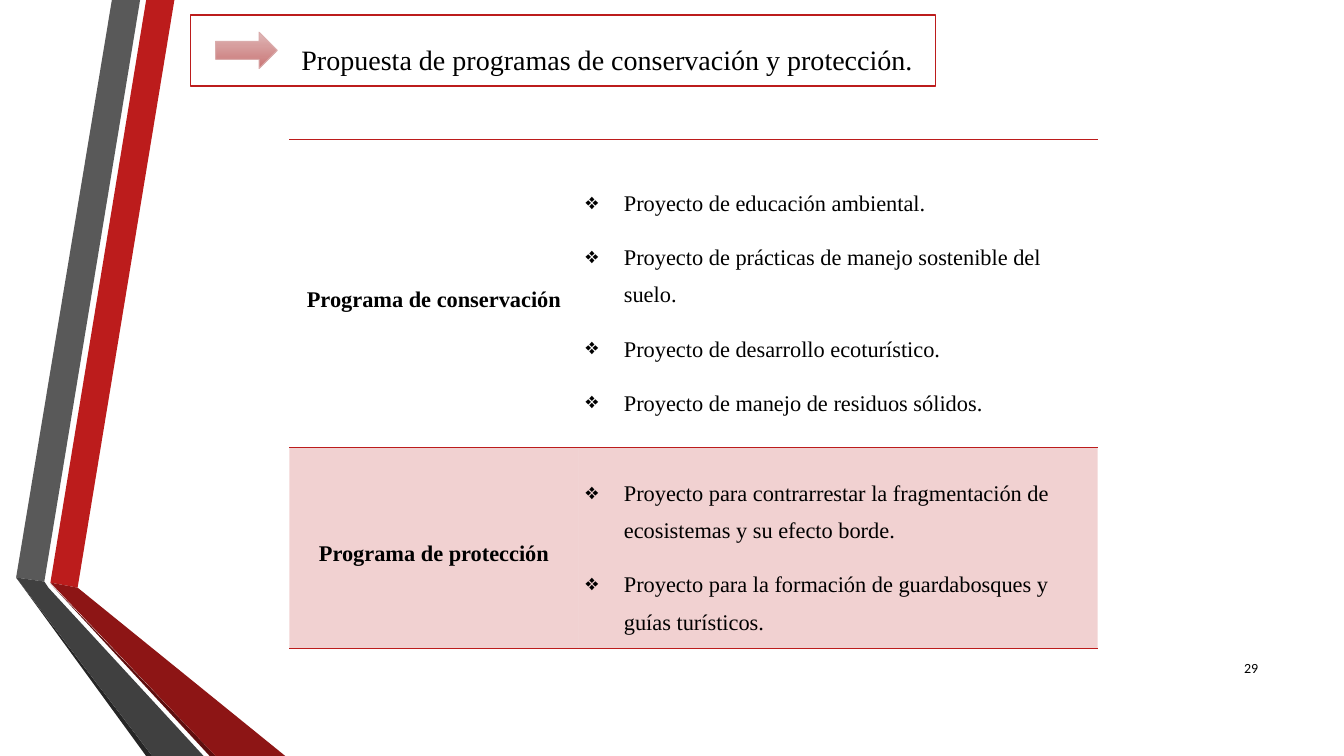
from dataclasses import dataclass
from lxml.etree import SubElement
from pptx import Presentation
from pptx.dml.color import RGBColor
from pptx.enum.shapes import MSO_SHAPE
from pptx.enum.text import MSO_ANCHOR, MSO_AUTO_SIZE, PP_ALIGN
from pptx.oxml.ns import qn
from pptx.util import Inches, Pt


@dataclass(frozen=True)
class Theme:
    red: str = "BC1C1C"
    deep_red: str = "8D1515"
    shadow_red: str = "5E0E0E"
    grey: str = "595959"
    deep_grey: str = "404040"
    shadow_grey: str = "262626"
    arrow_top: str = "DFB7B7"
    arrow_bottom: str = "C97575"
    arrow_edge: str = "DAACAC"
    white: str = "FFFFFF"
    ink: str = "000000"
    serif: str = "Times New Roman"
    sans: str = "Calibri"
    heading_size: int = 20
    body_size: int = 16
    number_size: int = 10


theme = Theme()
presentation = Presentation()
presentation.slide_width, presentation.slide_height = Inches(13.33), Inches(7.5)
slide = presentation.slides.add_slide(presentation.slide_layouts[5])
column, row = presentation.slide_width / 160, presentation.slide_height / 90


def place(x, y, width, height):
    return round(x * column), round(y * row), round(width * column), round(height * row)


def write(paragraph, wording, size, font=theme.serif, bold=False):
    run = paragraph.add_run()
    run.text = wording
    run.font.size, run.font.name, run.font.bold = Pt(size), font, bold
    run.font.color.rgb = RGBColor.from_string(theme.ink)


ribbons = [
    (theme.red, [(6, 69.36), (9.24, 69.96), (20.76, 0), (17.4, 0)]),
    (theme.grey, [(16.68, 0), (13.32, 0), (1.92, 68.76), (5.28, 69.24)]),
    (theme.shadow_grey, [(1.92, 68.76), (17.4, 90), (18.12, 90)]),
    (theme.shadow_red, [(6, 69.48), (24.96, 90), (25.68, 90)]),
    (theme.deep_red, [(6, 69.36), (25.68, 90), (33.96, 90), (9.24, 69.96)]),
    (theme.deep_grey, [(24.24, 90), (5.76, 69.96), (5.28, 69.24), (1.92, 68.76), (18.12, 90)]),
]
for colour, corners in ribbons:
    points = [(x * column, y * row) for x, y in corners]
    outline = slide.shapes.build_freeform(*points[0])
    outline.add_line_segments(points[1:], close=True)
    ribbon = outline.convert_to_shape()
    ribbon.shadow.inherit = False
    ribbon.fill.solid()
    ribbon.fill.fore_color.rgb = RGBColor.from_string(colour)
    ribbon.line.fill.background()

heading = slide.shapes.title
heading.left, heading.top, heading.width, heading.height = place(22.68, 1.8, 88.68, 8.4)
heading.fill.solid()
heading.fill.fore_color.rgb = RGBColor.from_string(theme.white)
heading.line.color.rgb = RGBColor.from_string(theme.red)
heading.line.width = Pt(1.25)
heading_text = heading.text_frame
heading_text.auto_size = MSO_AUTO_SIZE.NONE
heading_text.word_wrap = True
heading_text.vertical_anchor = MSO_ANCHOR.MIDDLE
heading_text.margin_left, heading_text.margin_right = Inches(1.1), 0
heading_line = heading_text.paragraphs[0]
heading_line.alignment = PP_ALIGN.LEFT
heading_line.line_spacing = 1.5
write(heading_line, "Propuesta de programas de conservación y protección.", theme.heading_size)

arrow = slide.shapes.add_shape(MSO_SHAPE.RIGHT_ARROW, *place(25.68, 3.84, 7.32, 4.32))
arrow.shadow.inherit = False
arrow.fill.gradient()
arrow.fill.gradient_angle = 270
for stop, colour in zip(arrow.fill.gradient_stops, (theme.arrow_top, theme.arrow_bottom)):
    stop.color.rgb = RGBColor.from_string(colour)
arrow.line.color.rgb = RGBColor.from_string(theme.arrow_edge)
arrow.line.width = Pt(0.75)

programmes = [
    ("Programa de conservación", 36.72, [
        "Proyecto de educación ambiental.",
        "Proyecto de prácticas de manejo sostenible del suelo.",
        "Proyecto de desarrollo ecoturístico.",
        "Proyecto de manejo de residuos sólidos.",
    ]),
    ("Programa de protección", 23.88, [
        "Proyecto para contrarrestar la fragmentación de ecosistemas y su efecto borde.",
        "Proyecto para la formación de guardabosques y guías turísticos.",
    ]),
]
table = slide.shapes.add_table(2, 2, *place(34.44, 16.56, 96.24, 60.6)).table
table.first_row = table.horz_banding = False
table_style = table._tbl.tblPr.find(qn("a:tableStyleId"))
table_style.text = "{2D5ABB26-0587-4C30-8999-92F81FD0307C}"
for table_column, width in zip(table.columns, (34.44, 61.8)):
    table_column.width = round(width * column)

for index, (programme, height, projects) in enumerate(programmes):
    table.rows[index].height = round(height * row)
    programme_cell, projects_cell = table.cell(index, 0), table.cell(index, 1)
    for cell in (programme_cell, projects_cell):
        cell.vertical_anchor = MSO_ANCHOR.MIDDLE
        cell.margin_left = cell.margin_right = Inches(0.07)
        cell.margin_top = cell.margin_bottom = 0
        properties = cell._tc.get_or_add_tcPr()
        for edge in ("a:lnT", "a:lnB"):
            border = SubElement(properties, qn(edge), w=str(Pt(1)))
            border_fill = SubElement(border, qn("a:solidFill"))
            SubElement(border_fill, qn("a:srgbClr"), val=theme.red)
        if index == 0:
            cell.fill.background()
        else:
            cell.fill.solid()
            cell.fill.fore_color.rgb = RGBColor.from_string(theme.red)
            tint = properties.find(qn("a:solidFill")).find(qn("a:srgbClr"))
            SubElement(tint, qn("a:alpha"), val="20000")

    programme_line = programme_cell.text_frame.paragraphs[0]
    programme_line.alignment = PP_ALIGN.CENTER
    programme_line.line_spacing = 1.5
    programme_line.space_after = Pt(12)
    write(programme_line, programme, theme.body_size, bold=True)

    projects_cell.margin_top = Pt(6)
    for order, project in enumerate(projects):
        frame = projects_cell.text_frame
        project_line = frame.add_paragraph() if order else frame.paragraphs[0]
        indents = project_line._p.get_or_add_pPr()
        indents.set("marL", str(Inches(0.38)))
        indents.set("indent", str(-Inches(0.38)))
        SubElement(indents, qn("a:buChar"), char="❖")
        project_line.line_spacing = 1.5
        project_line.space_before = Pt(6 if order else 0)
        project_line.space_after = Pt(6)
        write(project_line, project, theme.body_size)

page_number = slide.shapes.add_textbox(*place(143.76, 77.16, 7.2, 4.8)).text_frame
page_number.word_wrap = True
page_number.vertical_anchor = MSO_ANCHOR.MIDDLE
page_number.paragraphs[0].alignment = PP_ALIGN.RIGHT
write(page_number.paragraphs[0], "29", theme.number_size, theme.sans)

presentation.save("out.pptx")
